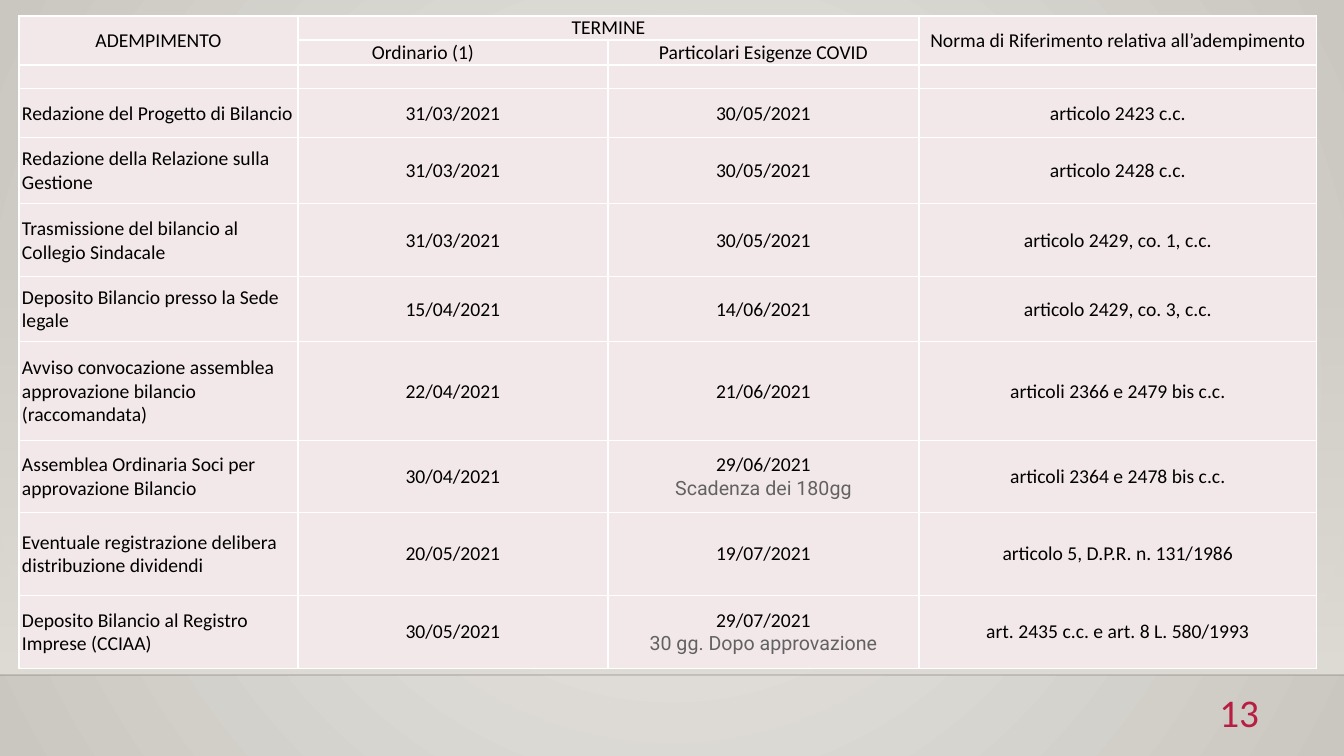
from lxml import etree
from pptx import Presentation
from pptx import util as u
from pptx.dml.color import RGBColor
from pptx.enum import shapes, text
from pptx.oxml.ns import qn

WIDTH, HEIGHT = 1344, 756
PX = 12192000 / WIDTH

BLACK = RGBColor(0x00, 0x00, 0x00)
WHITE = RGBColor(0xFF, 0xFF, 0xFF)
GREY = RGBColor(0x62, 0x62, 0x62)
CRIMSON = RGBColor(0xB7, 0x1E, 0x42)
ROSE = RGBColor(0xF3, 0xE8, 0xE9)
SAND = RGBColor(0xDF, 0xDB, 0xD5)
SAND_LIGHT = RGBColor(0xEC, 0xEA, 0xE7)
SAND_DARK = RGBColor(0xCA, 0xC7, 0xC1)

COLUMN_WIDTHS = [279, 310, 311, 398]
ROW_HEIGHTS = [24, 25, 24, 49, 66, 73, 65, 99, 72, 83, 73]
MERGES = [((0, 0), (1, 0)), ((0, 1), (0, 2)), ((0, 3), (1, 3))]
HEADER_ROWS = 3
ORDINARIO = (1, 1)

DEADLINES = [
    ["ADEMPIMENTO", "TERMINE", "", "Norma di Riferimento relativa all’adempimento"],
    ["", "Ordinario (1)", "Particolari Esigenze COVID", ""],
    ["", "", "", ""],
    ["Redazione del Progetto di Bilancio", "31/03/2021", "30/05/2021", "articolo 2423 c.c."],
    ["Redazione della Relazione sulla Gestione", "31/03/2021", "30/05/2021",
     "articolo 2428 c.c."],
    ["Trasmissione del bilancio al Collegio Sindacale", "31/03/2021", "30/05/2021",
     "articolo 2429, co. 1, c.c."],
    ["Deposito Bilancio presso la Sede legale", "15/04/2021", "14/06/2021",
     "articolo 2429, co. 3, c.c."],
    ["Avviso convocazione assemblea approvazione bilancio (raccomandata)",
     "22/04/2021", "21/06/2021", "articoli 2366 e 2479 bis c.c."],
    ["Assemblea Ordinaria Soci per approvazione Bilancio", "30/04/2021",
     "29/06/2021\nScadenza dei 180gg", "articoli 2364 e 2478 bis c.c."],
    ["Eventuale registrazione delibera distribuzione dividendi",
     "20/05/2021", "19/07/2021", "articolo 5, D.P.R. n. 131/1986"],
    ["Deposito Bilancio al Registro Imprese (CCIAA)", "30/05/2021",
     "29/07/2021\n30 gg. Dopo approvazione", "art. 2435 c.c. e art. 8 L. 580/1993"],
]


def px(length):
    return u.Emu(round(length * PX))


def set_alpha(color_element, percent):
    etree.SubElement(color_element, qn("a:alpha"), val=str(percent * 1000))


class SlideBuilder:
    font = "Calibri"
    note_font = "Roboto"
    table_size = 14

    def __init__(self, slide):
        self.slide = slide

    def fill_gradient(self, fill, first, last):
        fill.gradient()
        for stop, color in zip(fill.gradient_stops, (first, last)):
            stop.color.rgb = color

    def background(self, center, edge):
        """Radial gradient spreading from the middle of the slide."""
        fill = self.slide.background.fill
        self.fill_gradient(fill, center, edge)
        gradient = next(self.slide.element.iter(qn("a:gradFill")))
        gradient.remove(gradient.find(qn("a:lin")))
        circle = etree.SubElement(gradient, qn("a:path"), path="circle")
        etree.SubElement(circle, qn("a:fillToRect"),
                         dict.fromkeys("ltrb", "50000"))

    def fading_band(self, left, top, width, height, color):
        """Rectangle that goes from transparent at the top to solid."""
        band = self.slide.shapes.add_shape(
            shapes.MSO_SHAPE.RECTANGLE, px(left), px(top), px(width), px(height))
        band.shadow.inherit = False
        band.line.fill.background()
        self.fill_gradient(band.fill, color, color)
        band.fill.gradient_angle = 270
        set_alpha(next(band.element.spPr.iter(qn("a:srgbClr"))), 0)

    def rule(self, y, color, opacity):
        line = self.slide.shapes.add_connector(
            shapes.MSO_CONNECTOR.STRAIGHT, 0, px(y), px(WIDTH), px(y))
        line.line.color.rgb = color
        line.line.width = u.Pt(1)
        properties = line.element.spPr
        set_alpha(next(properties.iter(qn("a:srgbClr"))), opacity)
        etree.SubElement(properties, qn("a:effectLst"))

    def page_number(self, number, left, top, width, height):
        box = self.slide.shapes.add_textbox(px(left), px(top), px(width), px(height))
        frame = box.text_frame
        frame.word_wrap = True
        frame.vertical_anchor = text.MSO_ANCHOR.MIDDLE
        frame.text = number
        paragraph = frame.paragraphs[0]
        paragraph.alignment = text.PP_ALIGN.RIGHT
        self.style_runs(paragraph, self.font, 28, CRIMSON)

    def style_runs(self, paragraph, font, size, color):
        for run in paragraph.runs:
            run.font.name = font
            run.font.size = u.Pt(size)
            run.font.color.rgb = color

    def table(self, left, top, rows):
        frame = self.slide.shapes.add_table(
            len(rows), len(COLUMN_WIDTHS), px(left), px(top),
            px(sum(COLUMN_WIDTHS)), px(sum(ROW_HEIGHTS)))
        table = frame.table
        table.first_row = table.horz_banding = False
        for column, width in zip(table.columns, COLUMN_WIDTHS):
            column.width = px(width)
        for row, height in zip(table.rows, ROW_HEIGHTS):
            row.height = px(height)
        for r, row in enumerate(rows):
            for c, content in enumerate(row):
                is_label = c == 0 and r >= HEADER_ROWS
                self.cell(table.cell(r, c), content, is_label)
        table.cell(*ORDINARIO).margin_right = px(60)
        for first, last in MERGES:
            table.cell(*first).merge(table.cell(*last))

    def cell(self, cell, content, is_label):
        cell.margin_left = px(3 if is_label else 0)
        cell.margin_right = cell.margin_top = cell.margin_bottom = 0
        cell.vertical_anchor = text.MSO_ANCHOR.MIDDLE
        self.cell_borders(cell)
        cell.fill.solid()
        cell.fill.fore_color.rgb = ROSE
        cell.text_frame.text = content
        for index, paragraph in enumerate(cell.text_frame.paragraphs):
            paragraph.alignment = text.PP_ALIGN.LEFT if is_label else text.PP_ALIGN.CENTER
            font, color = (self.note_font, GREY) if index else (self.font, BLACK)
            self.style_runs(paragraph, font, self.table_size, color)
            if not content:
                end = etree.SubElement(paragraph._p, qn("a:endParaRPr"),
                                       sz=str(self.table_size * 100))
                etree.SubElement(end, qn("a:latin"), typeface=self.font)

    def cell_borders(self, cell):
        properties = cell._tc.get_or_add_tcPr()
        for side in "LRTB":
            border = etree.SubElement(properties, qn(f"a:ln{side}"), w=str(u.Pt(1)))
            fill = etree.SubElement(border, qn("a:solidFill"))
            etree.SubElement(fill, qn("a:srgbClr"), val=str(WHITE))


def main():
    presentation = Presentation()
    presentation.slide_width = px(WIDTH)
    presentation.slide_height = px(HEIGHT)
    blank_layout = presentation.slide_layouts[6]
    builder = SlideBuilder(presentation.slides.add_slide(blank_layout))
    builder.background(SAND_LIGHT, SAND_DARK)
    builder.fading_band(0, 223, WIDTH, 452, SAND)
    builder.rule(675, BLACK, 20)
    builder.page_number("13", 1179, 684, 90, 55)
    builder.table(19, 16, DEADLINES)
    presentation.save("out.pptx")


if __name__ == "__main__":
    main()
